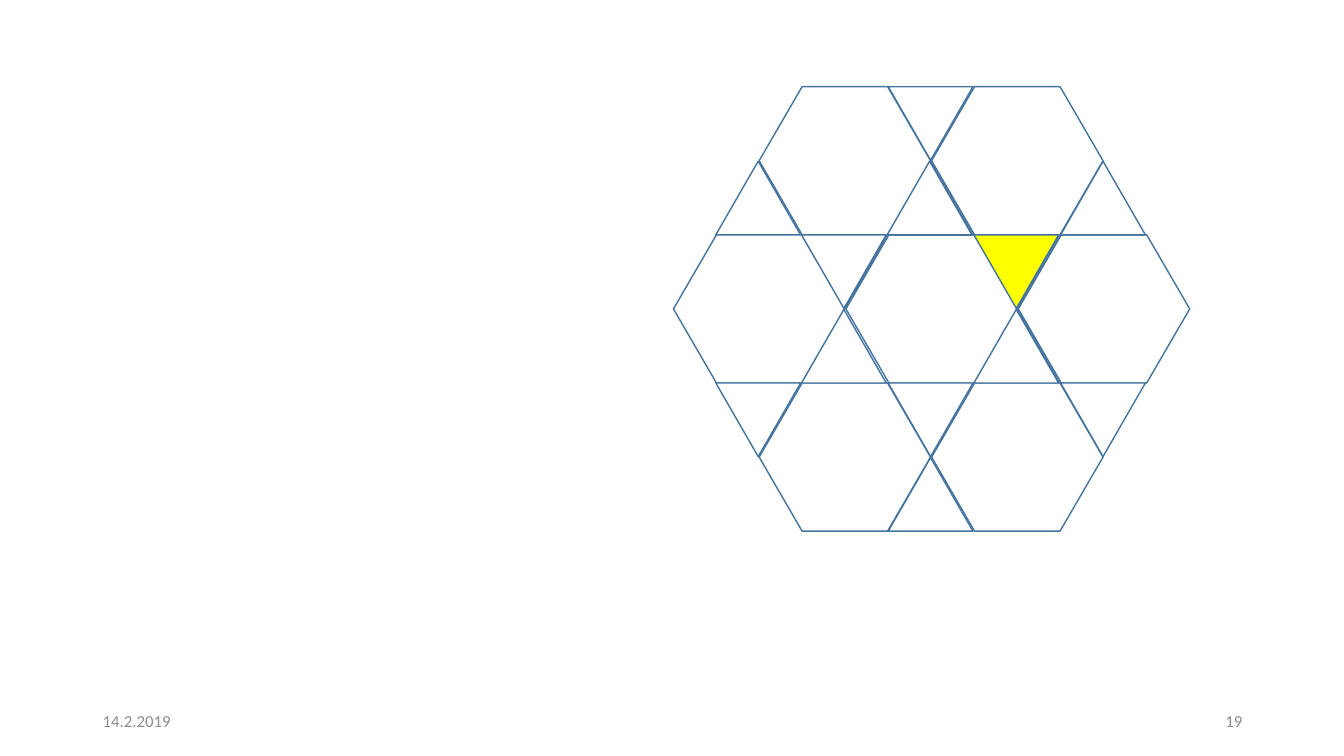
from dataclasses import dataclass

from pptx import Presentation
from pptx.dml.color import RGBColor
from pptx.enum.shapes import MSO_SHAPE as Preset
from pptx.enum.text import MSO_ANCHOR as Anchor, PP_ALIGN as Align
from pptx.shapes.shapetree import GroupShapes, SlideShapes
from pptx.util import Emu, Pt

EMU_PER_PX = 9144
HEX_PITCH, HEX_WIDTH, HEX_HEIGHT = 171, 170, 147
TRIANGLE_WIDTH, TRIANGLE_HEIGHT = 84, 73
HEX_LEFT, TRIANGLE_LEFT, TILING_TOP = 668, 710, 86
HEX_SLANT = 0.29


@dataclass(frozen=True)
class Theme:
    font: str = "Calibri"
    footer_size: int = 12
    outline_width: int = 1
    footer: str = "8C8C8C"
    outline: str = "43739E"
    tile: str = "FFFFFF"
    highlight: str = "FFFF00"


THEME = Theme()


@dataclass(frozen=True)
class Hexagon:
    column: int
    row: int


@dataclass(frozen=True)
class Triangle:
    column: int
    row: int
    down: bool = False
    nudge: int = 0
    fill: str = THEME.tile


TILES: list[Hexagon | Triangle] = [
    Triangle(0, 1),
    Hexagon(4, 2),
    Hexagon(0, 2),
    Hexagon(1, 0),
    Hexagon(2, 2),
    Hexagon(3, 0),
    Triangle(2, 1),
    Hexagon(1, 4),
    Triangle(1, 2, down=True, nudge=1),
    Triangle(3, 3, nudge=1),
    Triangle(3, 2, down=True, nudge=1),
    Triangle(0, 4, down=True),
    Triangle(2, 5),
    Triangle(4, 1),
    Triangle(2, 0, down=True),
    Triangle(4, 4, down=True),
    Hexagon(3, 4),
    Triangle(2, 1, nudge=-1),
    Triangle(1, 2, down=True),
    Triangle(3, 3),
    Triangle(2, 4, down=True),
    Triangle(3, 2, down=True, fill=THEME.highlight),
    Triangle(1, 3),
]


def px(length: int) -> Emu:
    """Turn px into EMU."""
    return Emu(length * EMU_PER_PX)


def add_text(shapes: SlideShapes, text: str, *, left: int, top: int, width: int,
             height: int, align: Align = Align.LEFT, size: int = THEME.footer_size,
             color: str = THEME.footer) -> None:
    """Add a vertically centred line of text."""
    frame = shapes.add_textbox(px(left), px(top), px(width), px(height)).text_frame
    frame.word_wrap = True
    frame.vertical_anchor = Anchor.MIDDLE
    paragraph = frame.paragraphs[0]
    paragraph.alignment = align
    run = paragraph.add_run()
    run.text = text
    run.font.name = THEME.font
    run.font.size = Pt(size)
    run.font.color.rgb = RGBColor.from_string(color)


def add_tile(tiling: GroupShapes, tile: Hexagon | Triangle) -> None:
    """Place one tile on the half-step grid."""
    across = HEX_PITCH * tile.column // 2
    top = TILING_TOP + (HEX_HEIGHT * tile.row + 1) // 2
    if isinstance(tile, Hexagon):
        outline = tiling.add_shape(Preset.HEXAGON, px(HEX_LEFT + across), px(top),
                                   px(HEX_WIDTH), px(HEX_HEIGHT))
        outline.adjustments[0] = HEX_SLANT
        fill = THEME.tile
    else:
        outline = tiling.add_shape(Preset.ISOSCELES_TRIANGLE,
                                   px(TRIANGLE_LEFT + across + tile.nudge), px(top),
                                   px(TRIANGLE_WIDTH), px(TRIANGLE_HEIGHT))
        outline.rotation = 180 if tile.down else 0
        fill = tile.fill
    outline.shadow.inherit = False
    outline.fill.solid()
    outline.fill.fore_color.rgb = RGBColor.from_string(fill)
    outline.line.color.rgb = RGBColor.from_string(THEME.outline)
    outline.line.width = Pt(THEME.outline_width)


def main() -> None:
    """Build the slide with the hexagon and triangle tiling."""
    deck = Presentation()
    deck.slide_width, deck.slide_height = px(1333), px(750)
    slide = deck.slides.add_slide(deck.slide_layouts[6])
    add_text(slide.shapes, "14.2.2019", left=92, top=695, width=300, height=40)
    add_text(slide.shapes, "19", left=942, top=695, width=300, height=40,
             align=Align.RIGHT)
    tiling = slide.shapes.add_group_shape().shapes
    for tile in TILES:
        add_tile(tiling, tile)
    deck.save("out.pptx")


if __name__ == "__main__":
    main()
